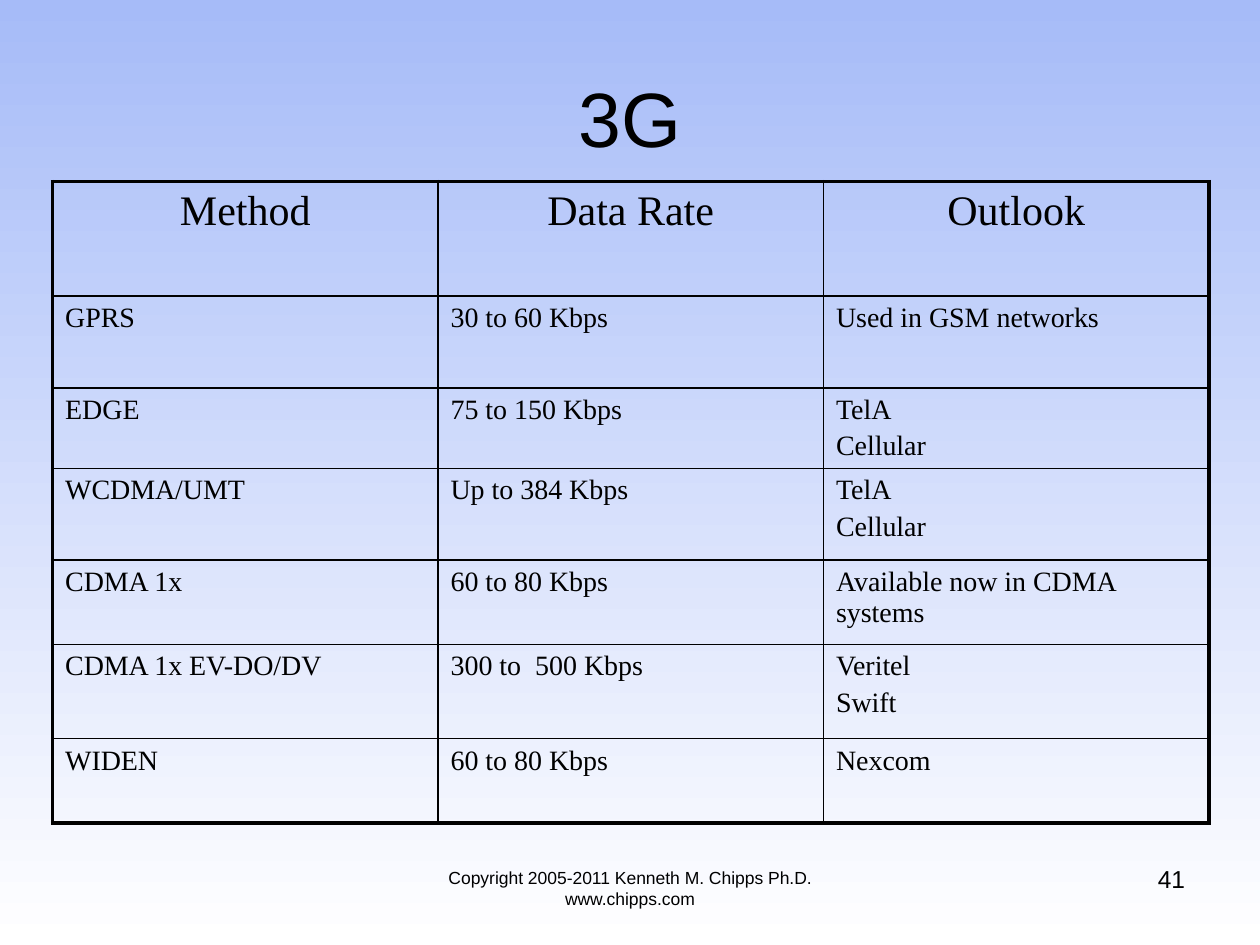
from dataclasses import dataclass

from lxml import etree
from pptx import Presentation
from pptx import util as u
from pptx.dml.color import RGBColor
from pptx.enum import text as t
from pptx.oxml import ns

BLACK = RGBColor(0, 0, 0)
SKY = RGBColor(0xA6, 0xBB, 0xF8)
WHITE = RGBColor(255, 255, 255)
SANS = "Arial"
SERIF = "Times New Roman"
THIN = 1
THICK = 2.25


@dataclass
class Style:
    font: str
    size: float
    align: t.PP_ALIGN
    gap: float = 0


@dataclass
class Note:
    words: str
    left: float
    top: float
    width: float
    height: float
    style: Style


@dataclass
class Row:
    height: float
    method: str
    rate: str
    outlook: str


TITLE = Style(SANS, 44, t.PP_ALIGN.CENTER)
HEAD = Style(SERIF, 24, t.PP_ALIGN.CENTER, 4.8)
BODY = Style(SERIF, 16, t.PP_ALIGN.LEFT, 3.2)

ROWS = [
    Row(2.31, "Method", "Data Rate", "Outlook"),
    Row(1.85, "GPRS", "30 to 60 Kbps", "Used in GSM networks"),
    Row(1.47, "EDGE", "75 to 150 Kbps", "TelA\nCellular"),
    Row(1.85, "WCDMA/UMT", "Up to 384 Kbps", "TelA\nCellular"),
    Row(1.7, "CDMA 1x", "60 to 80 Kbps", "Available now in CDMA systems"),
    Row(1.9, "CDMA 1x EV-DO/DV", "300 to  500 Kbps", "Veritel\nSwift"),
    Row(1.7, "WIDEN", "60 to 80 Kbps", "Nexcom"),
]

NOTES = [
    Note("Copyright 2005-2011 Kenneth M. Chipps Ph.D. www.chipps.com",
         7.62, 17.35, 10.16, 1.32, Style(SANS, 10, t.PP_ALIGN.CENTER)),
    Note("41", 18.21, 17.3, 5.93, 1.32, Style(SANS, 14, t.PP_ALIGN.RIGHT)),
]


def write(frame, words: str, style: Style) -> None:
    frame.word_wrap = True
    for i, line in enumerate(words.split("\n")):
        para = frame.add_paragraph() if i else frame.paragraphs[0]
        para.alignment = style.align
        para.space_before = u.Pt(style.gap)
        run = para.add_run()
        run.text = line
        run.font.name = style.font
        run.font.size = u.Pt(style.size)
        run.font.bold = False
        run.font.color.rgb = BLACK


def edge(cell, side: str, width: float) -> None:
    props = cell._tc.get_or_add_tcPr()
    line = etree.SubElement(props, ns.qn(f"a:ln{side}"), w=str(u.Pt(width)))
    fill = etree.SubElement(line, ns.qn("a:solidFill"))
    etree.SubElement(fill, ns.qn("a:srgbClr"), val=str(BLACK))


def draw_grid(slide, rows: list[Row]) -> None:
    wide = 7.77
    tall = sum(row.height for row in rows)
    grid = slide.shapes.add_table(
        len(rows), 3, u.Cm(1.06), u.Cm(3.66), u.Cm(3 * wide), u.Cm(tall)).table
    grid.first_row = grid.horz_banding = False
    for col in grid.columns:
        col.width = u.Cm(wide)
    last = len(rows) - 1
    for r, row in enumerate(rows):
        grid.rows[r].height = u.Cm(row.height)
        for c, words in enumerate((row.method, row.rate, row.outlook)):
            cell = grid.cell(r, c)
            outer = {"L": c == 0, "R": c == 2, "T": r == 0, "B": r == last}
            for side, thick in outer.items():
                edge(cell, side, THICK if thick else THIN)
            cell.fill.background()
            write(cell.text_frame, words, BODY if r else HEAD)


def draw_note(slide, note: Note) -> None:
    spot = (note.left, note.top, note.width, note.height)
    box = slide.shapes.add_textbox(*map(u.Cm, spot))
    write(box.text_frame, note.words, note.style)


def paint(slide) -> None:
    fill = slide.background.fill
    fill.gradient()
    fill.gradient_angle = 270
    for stop, color, place in zip(fill.gradient_stops, (SKY, WHITE), (0, 1)):
        stop.color.rgb = color
        stop.position = place


def main() -> None:
    deck = Presentation()
    deck.slide_width, deck.slide_height = u.Cm(25.4), u.Cm(19.05)
    slide = deck.slides.add_slide(deck.slide_layouts[5])
    paint(slide)
    title = slide.shapes.title
    title.left, title.top = u.Cm(1.27), u.Cm(0.76)
    title.width, title.height = u.Cm(22.86), u.Cm(3.18)
    title.text_frame.vertical_anchor = t.MSO_ANCHOR.MIDDLE
    write(title.text_frame, "3G", TITLE)
    draw_grid(slide, ROWS)
    for note in NOTES:
        draw_note(slide, note)
    deck.save("out.pptx")


if __name__ == "__main__":
    main()
